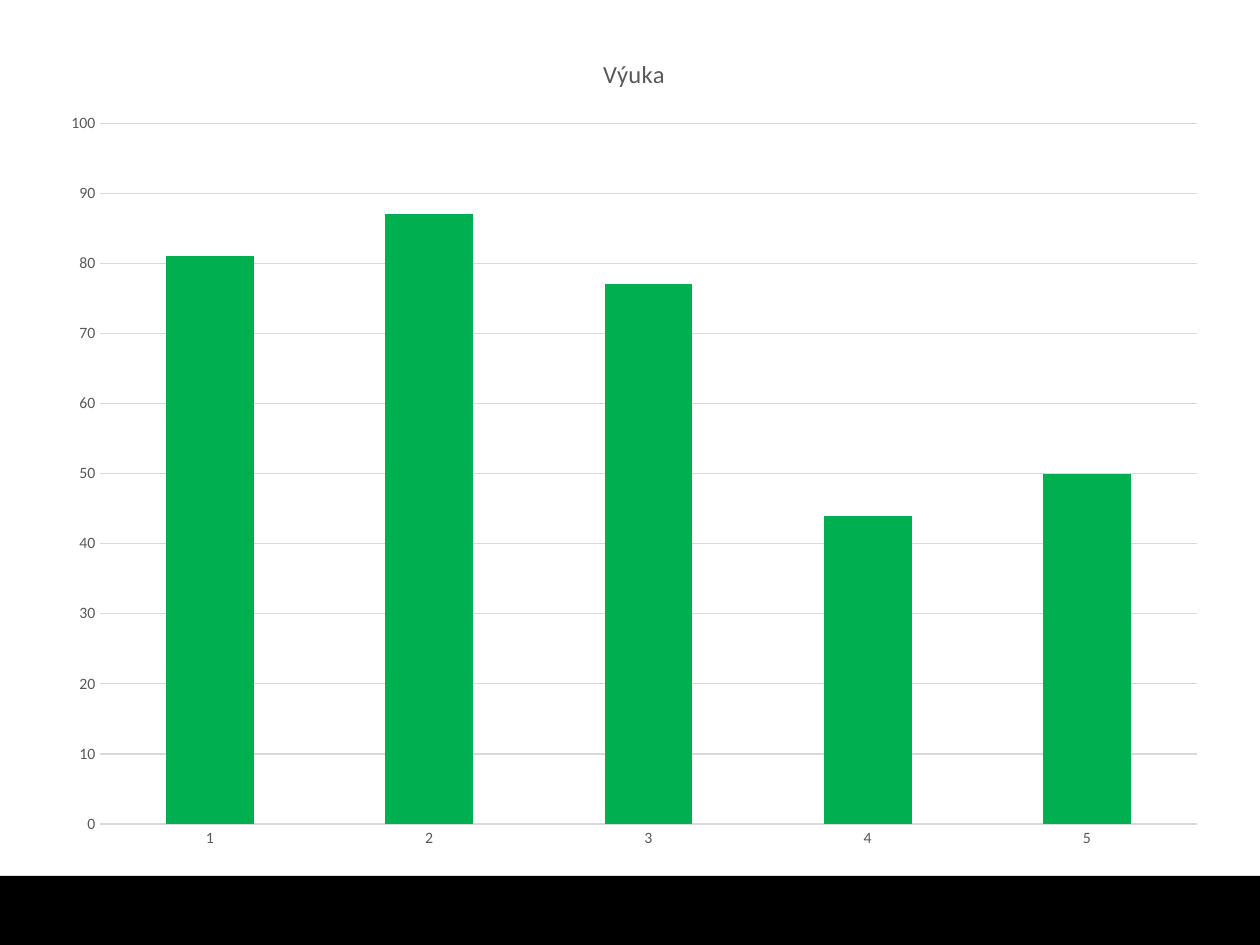
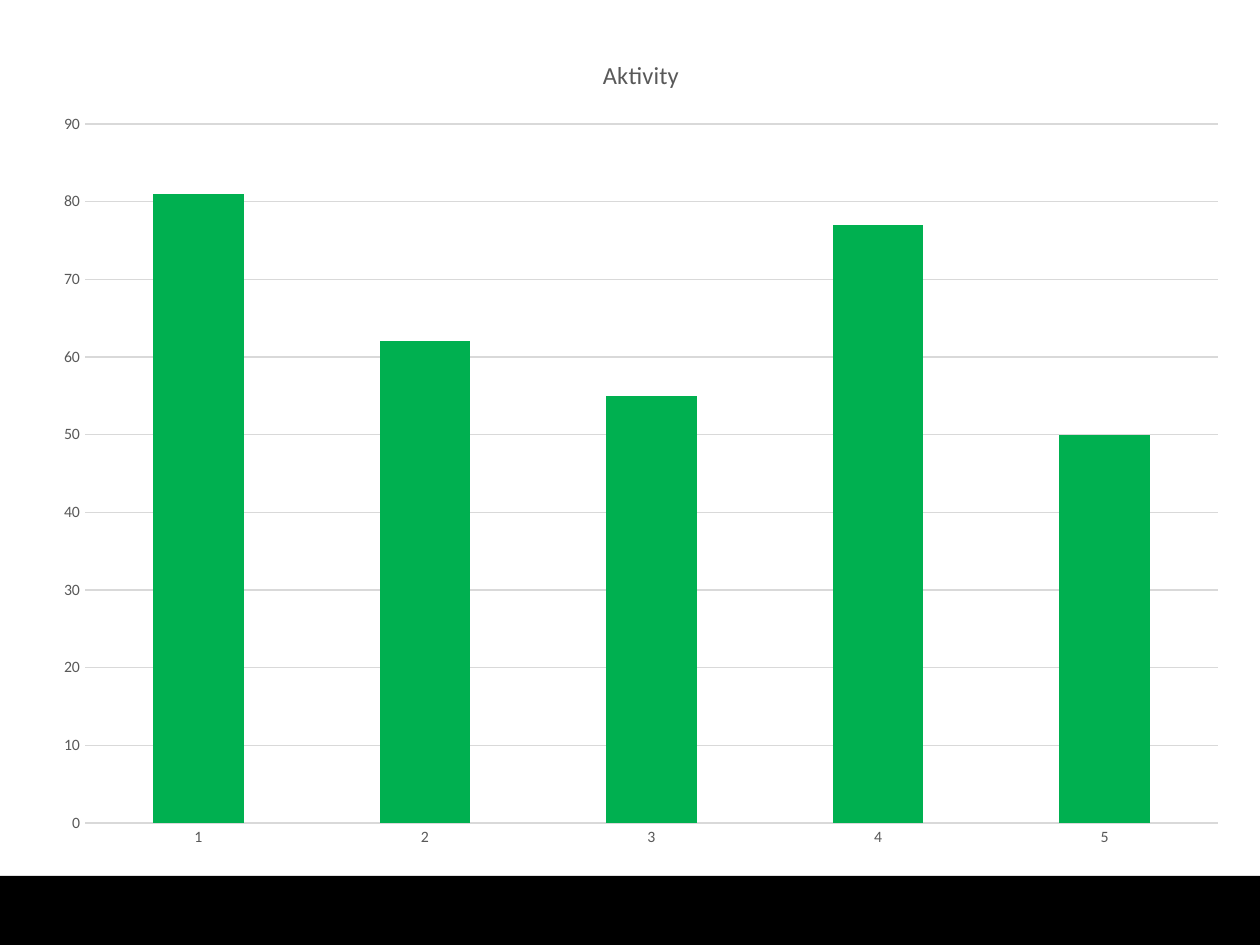
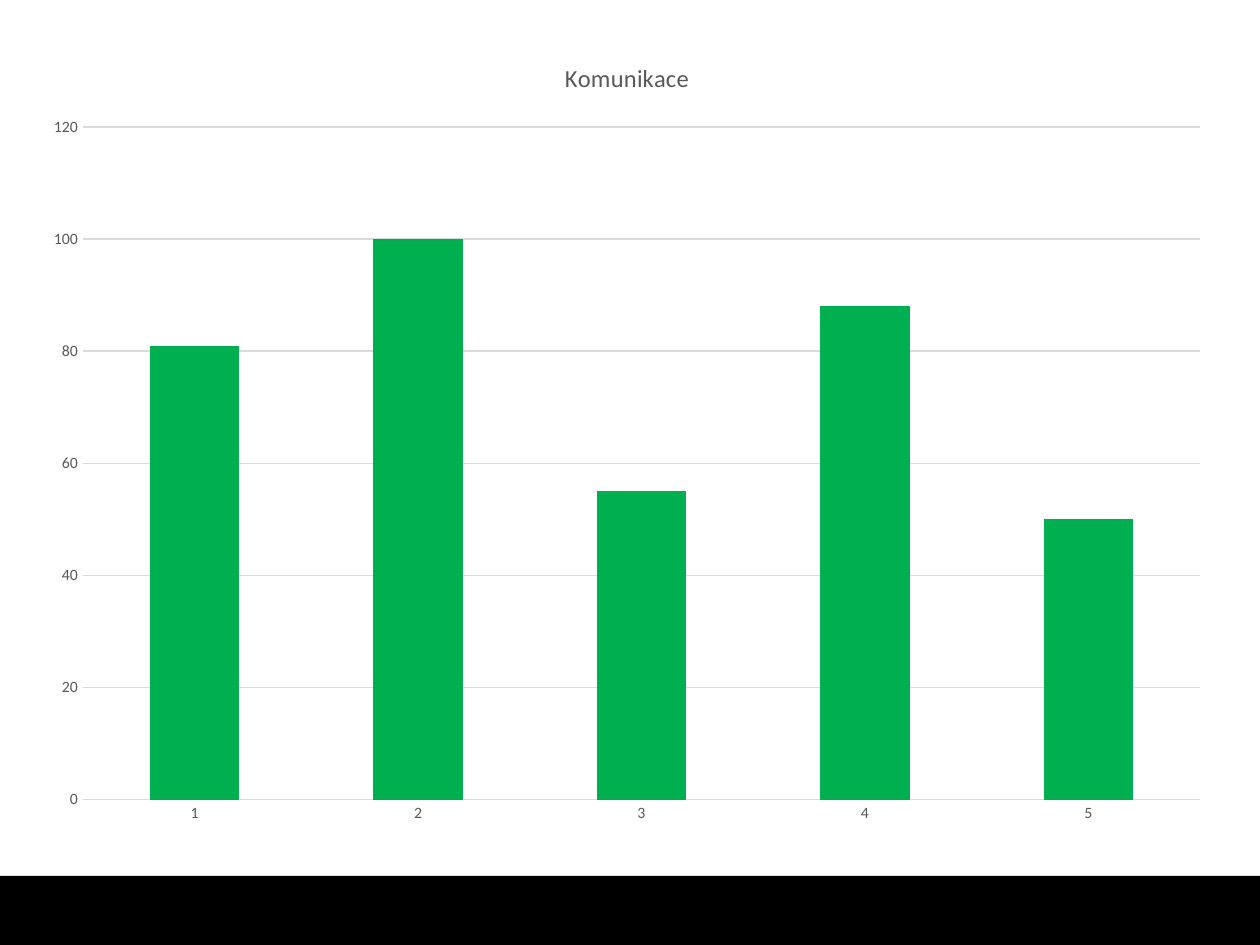
from pptx import Presentation
from pptx.chart.data import CategoryChartData
from pptx.dml.color import RGBColor
from pptx.enum.chart import XL_CHART_TYPE, XL_TICK_MARK
from pptx.enum.shapes import MSO_SHAPE
from pptx.util import Emu, Pt

COLORS = {"paper": "FFFFFF", "band": "000000", "bar": "00B050", "label": "595959", "grid": "D9D9D9"}
FONT = "Calibri"
WIDTH, HEIGHT, BAND_TOP = 1260, 945, 876
RATINGS = [
    ("Výuka", (81, 87, 77, 44, 50), (48, 29, 1172, 835), 100, 10),
    ("Aktivity", (81, 62, 55, 77, 50), (40, 30, 1202, 833), 90, 10),
    ("Komunikace", (81, 100, 55, 88, 50), (30, 34, 1194, 805), 120, 20),
]


def px(length):
    return Emu(round(length * 914400 / 126))


def style_font(font, size, color):
    font.name = FONT
    font.size = Pt(size)
    font.bold = False
    font.color.rgb = RGBColor.from_string(COLORS[color])


deck = Presentation()
deck.slide_width, deck.slide_height = px(WIDTH), px(HEIGHT)
blank = deck.slide_layouts[6]

for topic, scores, place, top_score, step in RATINGS:
    slide = deck.slides.add_slide(blank)
    slide.background.fill.solid()
    slide.background.fill.fore_color.rgb = RGBColor.from_string(COLORS["paper"])

    band = slide.shapes.add_shape(
        MSO_SHAPE.RECTANGLE, px(0), px(BAND_TOP), px(WIDTH), px(HEIGHT - BAND_TOP)
    )
    band.shadow.inherit = False
    band.fill.solid()
    band.fill.fore_color.rgb = RGBColor.from_string(COLORS["band"])
    band.line.fill.background()

    ratings = CategoryChartData()
    ratings.categories = ["1", "2", "3", "4", "5"]
    ratings.add_series(topic, scores)
    chart = slide.shapes.add_chart(
        XL_CHART_TYPE.COLUMN_CLUSTERED, *[px(length) for length in place], ratings
    ).chart
    style_font(chart.font, 10, "band")
    chart.has_legend = False
    chart.has_title = True
    heading = chart.chart_title.text_frame.paragraphs[0].add_run()
    heading.text = topic
    style_font(heading.font, 14, "label")
    chart.chart_title.include_in_layout = False

    for axis in (chart.category_axis, chart.value_axis):
        axis.major_tick_mark = XL_TICK_MARK.NONE
        axis.minor_tick_mark = XL_TICK_MARK.NONE
        axis.format.line.fill.background()
        style_font(axis.tick_labels.font, 9, "label")

    scale = chart.value_axis
    scale.minimum_scale, scale.maximum_scale, scale.major_unit = 0, top_score, step
    scale.has_major_gridlines = True
    scale.major_gridlines.format.line.color.rgb = RGBColor.from_string(COLORS["grid"])
    scale.major_gridlines.format.line.width = Pt(0.75)

    columns = chart.plots[0]
    columns.gap_width = 150
    columns.vary_by_categories = False
    bars = columns.series[0]
    bars.format.fill.solid()
    bars.format.fill.fore_color.rgb = RGBColor.from_string(COLORS["bar"])

deck.save("out.pptx")
